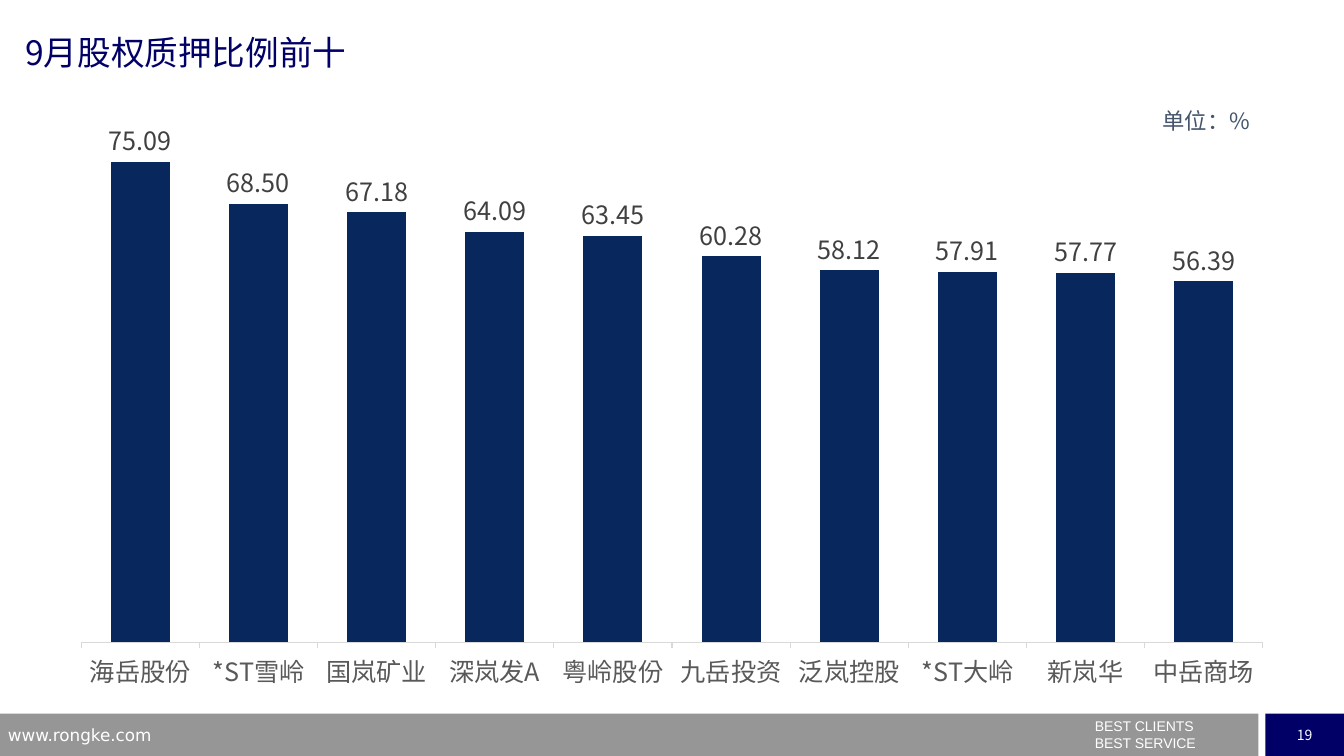
from lxml.etree import SubElement
from pptx import Presentation
from pptx.chart.data import CategoryChartData
from pptx.dml.color import RGBColor
from pptx.enum.chart import XL_CHART_TYPE as ChartType
from pptx.enum.chart import XL_LABEL_POSITION as LabelPosition
from pptx.enum.chart import XL_TICK_LABEL_POSITION as TickLabelPosition
from pptx.enum.chart import XL_TICK_MARK as TickMark
from pptx.enum.shapes import MSO_SHAPE as Shape
from pptx.enum.text import MSO_ANCHOR as Anchor
from pptx.enum.text import PP_ALIGN as Align
from pptx.oxml.ns import qn
from pptx.util import Inches, Pt

NAVY, BAR_BLUE, GREY = "000066", "08275D", "969696"
CJK, CHART_FONT = "Noto Sans CJK SC", "Noto Sans CJK JP"
WIDTH, HEIGHT = 13.33, 7.5
FOOTER_HEIGHT = 0.42
FOOTER_TOP = HEIGHT - FOOTER_HEIGHT
PAGE_BOX_WIDTH = 0.78
FOOTER_GAP = 0.07
PAGE_BOX_LEFT = WIDTH - PAGE_BOX_WIDTH

presentation = Presentation()
presentation.slide_width = Inches(WIDTH)
presentation.slide_height = Inches(HEIGHT)
slide = presentation.slides.add_slide(presentation.slide_layouts[6])


def style_font(font, name, size, color):
    """Set size, colour and typeface, for Latin and East Asian text alike."""
    font.size = Pt(size)
    font.color.rgb = RGBColor.from_string(color)
    font.name = name
    SubElement(font._element, qn("a:ea"), typeface=name)


def add_text(text, left, top, width, height, *, font, size, color="FFFFFF",
             align=Align.LEFT, anchor=Anchor.TOP, insets=(0, 0), fill=None):
    """Add a text box, or a filled rectangle when fill is given."""
    box = tuple(Inches(length) for length in (left, top, width, height))
    if fill:
        shape = slide.shapes.add_shape(Shape.RECTANGLE, *box)
        shape.shadow.inherit = False
        shape.fill.solid()
        shape.fill.fore_color.rgb = RGBColor.from_string(fill)
        shape.line.fill.background()
    else:
        shape = slide.shapes.add_textbox(*box)
    frame = shape.text_frame
    frame.word_wrap = True
    frame.vertical_anchor = anchor
    frame.margin_left = frame.margin_right = Inches(insets[0])
    frame.margin_top = frame.margin_bottom = Inches(insets[1])
    for index, line in enumerate(text.splitlines()):
        paragraph = frame.add_paragraph() if index else frame.paragraphs[0]
        paragraph.alignment = align
        run = paragraph.add_run()
        run.text = line
        style_font(run.font, font, size, color)


# Footer
add_text("", 0, FOOTER_TOP, PAGE_BOX_LEFT - FOOTER_GAP, FOOTER_HEIGHT,
         font=CJK, size=10, fill=GREY)
add_text("19", PAGE_BOX_LEFT, FOOTER_TOP, PAGE_BOX_WIDTH, FOOTER_HEIGHT,
         font=CJK, size=10, align=Align.CENTER, anchor=Anchor.MIDDLE, fill=NAVY)
add_text("BEST CLIENTS\nBEST SERVICE", 10.76, 7.12, 2.56, 0.36,
         font="Arial", size=10, insets=(0.1, 0))
add_text("www.rongke.com", -0.02, 7.14, 3.22, 0.26,
         font="DejaVu Sans", size=12, insets=(0.1, 0.05))

# Pledge ratio chart
pledge_ratios = {
    "海岳股份": 75.09, "*ST雪岭": 68.5, "国岚矿业": 67.18, "深岚发A": 64.09,
    "粤岭股份": 63.45, "九岳投资": 60.28, "泛岚控股": 58.12, "*ST大岭": 57.91,
    "新岚华": 57.77, "中岳商场": 56.39,
}
data = CategoryChartData(number_format="#,##0.00")
data.categories = list(pledge_ratios)
data.add_series("Series 1", list(pledge_ratios.values()))
chart = slide.shapes.add_chart(
    ChartType.COLUMN_CLUSTERED, Inches(0.8), Inches(1.07),
    Inches(11.73), Inches(5.89), data).chart
chart.has_legend = False
chart.has_title = False
style_font(chart.font, CHART_FONT, 18, "000000")

plot = chart.plots[0]
plot.gap_width = 100
plot.overlap = -27
plot.vary_by_categories = False
bars = plot.series[0].format.fill
bars.solid()
bars.fore_color.rgb = RGBColor.from_string(BAR_BLUE)

plot.has_data_labels = True
labels = plot.data_labels
labels.show_value = True
labels.position = LabelPosition.OUTSIDE_END
labels.number_format = "#,##0.00"
labels.number_format_is_linked = False
style_font(labels.font, CHART_FONT, 18, "404040")

value_axis = chart.value_axis
value_axis.minimum_scale = 0
value_axis.maximum_scale = 80
value_axis.has_major_gridlines = False
value_axis.tick_label_position = TickLabelPosition.NONE
value_axis.visible = False

category_axis = chart.category_axis
category_axis.has_major_gridlines = False
category_axis.major_tick_mark = TickMark.OUTSIDE
category_axis.format.line.width = Pt(0.75)
category_axis.format.line.color.rgb = RGBColor.from_string("D9D9D9")
style_font(category_axis.tick_labels.font, CHART_FONT, 18, "595959")

plot_area = chart._chartSpace.chart.plotArea
for layout in plot_area.findall(qn("c:layout")):
    plot_area.remove(layout)
layout = SubElement(plot_area, qn("c:layout"))
plot_area.insert(0, layout)
manual_layout = SubElement(layout, qn("c:manualLayout"))
for tag, value in (("layoutTarget", "inner"), ("xMode", "edge"), ("yMode", "edge"),
                   ("x", "0"), ("y", "0.038"), ("w", "1"), ("h", "0.862")):
    SubElement(manual_layout, qn(f"c:{tag}"), val=value)

# Title and unit
add_text("9月股权质押比例前十", 0.25, 0.32, 9, 0.42, font=CJK, size=24, color=NAVY)
add_text("单位：%", 11.53, 1.06, 1, 0.27, font=CJK, size=16, color="44546A",
         align=Align.JUSTIFY)

presentation.save("out.pptx")
